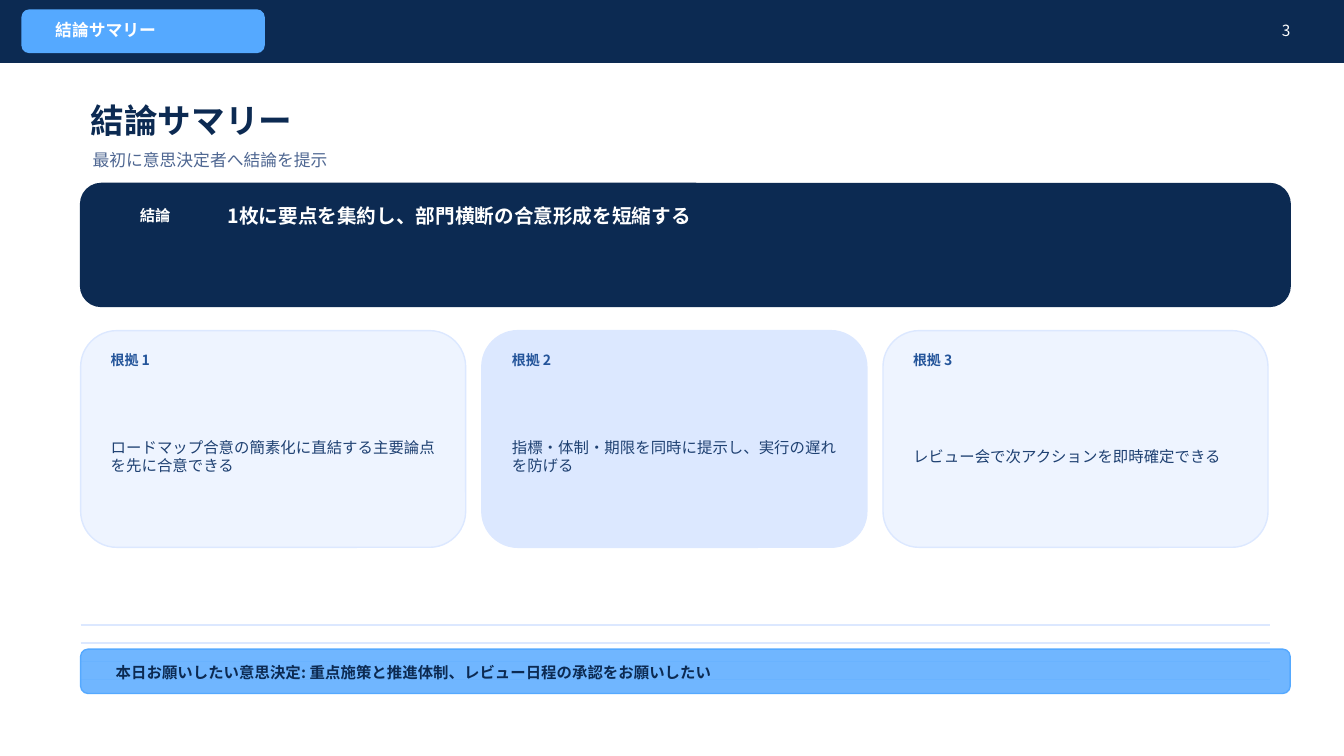
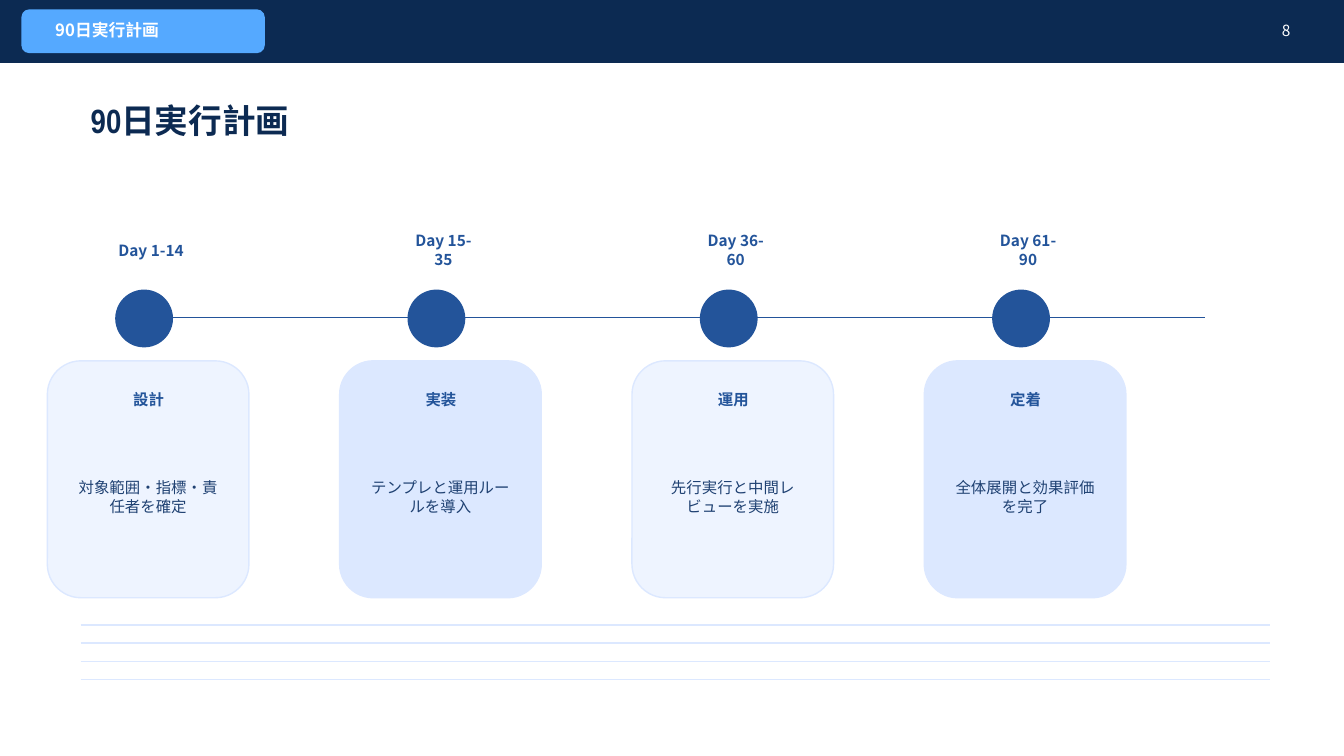
from lxml import etree
from pptx import Presentation
from pptx.dml.color import RGBColor
from pptx.enum.shapes import MSO_CONNECTOR, MSO_SHAPE
from pptx.enum.text import MSO_ANCHOR, MSO_AUTO_SIZE, PP_ALIGN
from pptx.oxml.ns import qn
from pptx.util import Pt

NAVY = RGBColor(0x0C, 0x2A, 0x52)
BLUE = RGBColor(0x23, 0x54, 0x9A)
SKY = RGBColor(0x55, 0xA9, 0xFF)
PALE = RGBColor(0xEE, 0xF4, 0xFF)
MIST = RGBColor(0xDC, 0xE8, 0xFF)
INK = RGBColor(0x1F, 0x41, 0x72)
SLATE = RGBColor(0x4F, 0x67, 0x92)
WHITE = RGBColor(0xFF, 0xFF, 0xFF)

RECT = MSO_SHAPE.RECTANGLE
ROUNDED = MSO_SHAPE.ROUNDED_RECTANGLE
OVAL = MSO_SHAPE.OVAL
STRAIGHT = MSO_CONNECTOR.STRAIGHT
MIDDLE = MSO_ANCHOR.MIDDLE
NO_AUTOFIT = MSO_AUTO_SIZE.NONE
LEFT, CENTER, RIGHT = PP_ALIGN.LEFT, PP_ALIGN.CENTER, PP_ALIGN.RIGHT

BODY_FONT = "Noto Sans CJK JP"
TITLE_FONT = "Arial Narrow"
TITLE_ONLY_LAYOUT = 5
SLIDE_WIDTH, SLIDE_HEIGHT = 960, 540
MARGIN = 57.6
CARD_FILLS = (PALE, MIST)

REASON_PITCH = 286.56
REASONS = (
    "ロードマップ合意の簡素化に直結する主要論点を先に合意できる",
    "指標・体制・期限を同時に提示し、実行の遅れを防げる",
    "レビュー会で次アクションを即時確定できる",
)

PHASE_LEFT, PHASE_PITCH = 33.84, 208.8
PHASES = (
    ("Day 1-14", "設計", "対象範囲・指標・責任者を確定"),
    ("Day 15-35", "実装", "テンプレと運用ルールを導入"),
    ("Day 36-60", "運用", "先行実行と中間レビューを実施"),
    ("Day 61-90", "定着", "全体展開と効果評価を完了"),
)


def write(frame, text, size, color, bold=False, align=LEFT, font_name=BODY_FONT):
    """Fill a text frame with one formatted, vertically centred paragraph."""
    frame.word_wrap = True
    frame.auto_size = NO_AUTOFIT
    frame.vertical_anchor = MIDDLE
    paragraph = frame.paragraphs[0]
    paragraph.text = text
    paragraph.alignment = align
    font = paragraph.font
    font.size = Pt(size)
    font.bold = bold
    font.color.rgb = color
    font.name = font_name
    defaults = paragraph._p.pPr.find(qn("a:defRPr"))
    etree.SubElement(defaults, qn("a:ea")).set("typeface", BODY_FONT)


def add_text(slide, left, top, width, height, text, size, color, **style):
    """Add a text box with one paragraph."""
    box = slide.shapes.add_textbox(Pt(left), Pt(top), Pt(width), Pt(height))
    write(box.text_frame, text, size, color, **style)


def add_panel(slide, kind, left, top, width, height, fill, border=None):
    """Add a flat filled shape and return it."""
    panel = slide.shapes.add_shape(kind, Pt(left), Pt(top), Pt(width), Pt(height))
    panel.shadow.inherit = False
    panel.fill.solid()
    panel.fill.fore_color.rgb = fill
    panel.line.color.rgb = border or fill
    panel.line.width = Pt(1)
    return panel


def add_rule(slide, left, right, y, color):
    """Add a thin horizontal line."""
    rule = slide.shapes.add_connector(STRAIGHT, Pt(left), Pt(y), Pt(right), Pt(y))
    rule.line.color.rgb = color
    rule.line.width = Pt(1)
    etree.SubElement(rule._element.spPr, qn("a:effectLst"))


def set_opacity(panel, percent):
    """Make the fill of a panel partly transparent."""
    color = panel._element.spPr.find(qn("a:solidFill"))[0]
    etree.SubElement(color, qn("a:alpha")).set("val", str(percent * 1000))


def add_base_slide(deck, title, number):
    """Add a slide with the shared rules, header band and title."""
    slide = deck.slides.add_slide(deck.slide_layouts[TITLE_ONLY_LAYOUT])
    for row in range(4):
        add_rule(slide, MARGIN, 907.2, 446.4 + row * 12.96, MIST)
    add_panel(slide, RECT, 0, 0, SLIDE_WIDTH, 44.64, NAVY)
    add_panel(slide, ROUNDED, 15.84, 7.2, 172.8, 30.24, SKY)
    add_text(slide, 32.4, 12.96, 633.6, 17.28, title, 12, WHITE, bold=True)
    add_text(slide, 874.8, 12.96, 54, 17.28, number, 11, WHITE, align=RIGHT)
    heading = slide.shapes.title
    heading.left, heading.top = Pt(MARGIN), Pt(68.4)
    heading.width, heading.height = Pt(820.8), Pt(34.56)
    write(heading.text_frame, title, 24, NAVY, bold=True, font_name=TITLE_FONT)
    return slide


def add_reason(slide, index, reason):
    """Add one numbered reason card."""
    left = MARGIN + index * REASON_PITCH
    add_panel(slide, ROUNDED, left, 236.16, 275.04, 154.8, CARD_FILLS[index % 2], MIST)
    add_text(slide, left + 14.4, 249.12, 64.8, 15.84, f"根拠 {index + 1}", 10, BLUE, bold=True)
    add_text(slide, left + 14.4, 272.16, 246.24, 108, reason, 11, INK)


def add_phase(slide, index, days, name, goal):
    """Add one timeline phase: milestone, day range and card."""
    left = PHASE_LEFT + index * PHASE_PITCH
    add_panel(slide, OVAL, left + 48.96, 207.36, 40.32, 40.32, BLUE)
    add_text(slide, left + 41.76, 169.92, 64.8, 17.28, days, 11, BLUE, bold=True, align=CENTER)
    add_panel(slide, ROUNDED, left, 257.76, 144, 169.2, CARD_FILLS[index % 2], MIST)
    add_text(slide, left + 16.56, 277.2, 111.6, 15.84, name, 11, BLUE, bold=True, align=CENTER)
    add_text(slide, left + 10.08, 300.96, 123.84, 108, goal, 11, INK, align=CENTER)


def build_summary(deck):
    """Build the conclusion summary slide."""
    slide = add_base_slide(deck, "結論サマリー", "3")
    add_text(slide, 59.04, 103.68, 806.4, 21.6, "最初に意思決定者へ結論を提示", 12, SLATE)
    add_panel(slide, ROUNDED, MARGIN, 131.04, 864, 87.84, NAVY)
    add_text(slide, 74.88, 145.44, 72, 17.28, "結論", 11, WHITE, bold=True, align=CENTER)
    add_text(slide, 155.52, 142.56, 748.8, 23.04,
             "1枚に要点を集約し、部門横断の合意形成を短縮する", 14, WHITE, bold=True)
    for index, reason in enumerate(REASONS):
        add_reason(slide, index, reason)
    decision = add_panel(slide, ROUNDED, MARGIN, 463.68, 864, 31.68, SKY)
    set_opacity(decision, 84)
    add_text(slide, 75.6, 472.32, 828, 15.84,
             "本日お願いしたい意思決定: 重点施策と推進体制、レビュー日程の承認をお願いしたい",
             11, NAVY, bold=True)


def build_plan(deck):
    """Build the 90-day plan slide."""
    slide = add_base_slide(deck, "90日実行計画", "8")
    add_rule(slide, 97.2, 860.4, 226.8, BLUE)
    for index, phase in enumerate(PHASES):
        add_phase(slide, index, *phase)


def main():
    """Build and save the deck."""
    deck = Presentation()
    deck.slide_width, deck.slide_height = Pt(SLIDE_WIDTH), Pt(SLIDE_HEIGHT)
    build_summary(deck)
    build_plan(deck)
    deck.save("out.pptx")


if __name__ == "__main__":
    main()
